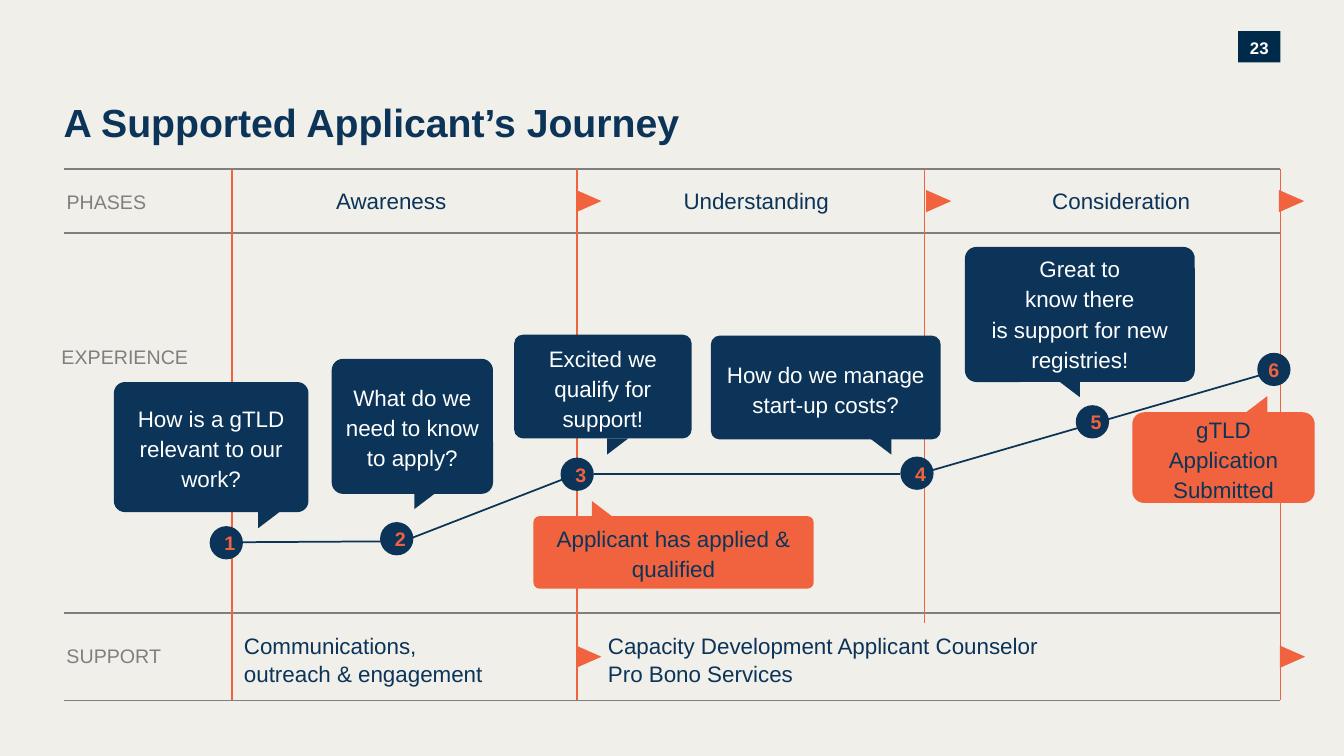
import pptx
import pptx.dml.color
import pptx.enum.shapes
import pptx.enum.text
import pptx.oxml
import pptx.util
from pptx.util import Inches

COLORS = {
    "paper": "F1EFEA",
    "navy": "0B3458",
    "dark": "002A49",
    "orange": "F1633E",
    "gray": "7F7F7F",
    "white": "FFFFFF",
}
RGB = {name: pptx.dml.color.RGBColor.from_string(value) for name, value in COLORS.items()}
SHAPE = pptx.enum.shapes.MSO_SHAPE
MIDDLE = pptx.enum.text.MSO_ANCHOR.MIDDLE
TOP = pptx.enum.text.MSO_ANCHOR.TOP
CENTER = pptx.enum.text.PP_ALIGN.CENTER
LEFT = pptx.enum.text.PP_ALIGN.LEFT

presentation = pptx.Presentation()
presentation.slide_width = Inches(13.33)
presentation.slide_height = Inches(7.5)
slide = presentation.slides.add_slide(presentation.slide_layouts[6])
slide.background.fill.solid()
slide.background.fill.fore_color.rgb = RGB["paper"]


def add_filled(kind, box, color):
    shape = slide.shapes.add_shape(kind, *map(Inches, box))
    shape.shadow.inherit = False
    shape.fill.solid()
    shape.fill.fore_color.rgb = RGB[color]
    shape.line.fill.background()
    return shape


def write_text(shape, text, size, color, bold=False, align=CENTER, anchor=MIDDLE,
               insets=(0, 0, 0, 0), spacing=None):
    frame = shape.text_frame
    left, top, right, bottom = map(Inches, insets)
    frame_format = {"word_wrap": True, "vertical_anchor": anchor, "margin_left": left,
                    "margin_top": top, "margin_right": right, "margin_bottom": bottom}
    for name, value in frame_format.items():
        setattr(frame, name, value)
    paragraph = frame.paragraphs[0]
    paragraph.text = text
    paragraph.alignment = align
    paragraph.line_spacing = spacing
    for run in paragraph.runs:
        font_format = {"name": "Arial", "size": pptx.util.Pt(size), "bold": bold}
        for name, value in font_format.items():
            setattr(run.font, name, value)
        run.font.color.rgb = RGB[color]


# Page number
page_number = add_filled(SHAPE.RECTANGLE, (12.28, 0.31, 0.42, 0.31), "dark")
write_text(page_number, "23", 12, "white", bold=True, spacing=1.08)

# Title, row labels, phase names and support texts
heading = {"size": 28, "color": "navy", "bold": True, "align": LEFT, "anchor": TOP}
row_label = {"size": 14, "color": "gray", "align": LEFT, "anchor": TOP}
phase = {"size": 16, "color": "navy", "spacing": 1.06}
support = {**phase, "align": LEFT}
texts = [
    ("A Supported Applicant’s Journey", (0.63, 0.98, 8.51, 0.58), heading),
    ("PHASES", (0.66, 1.88, 1.45, 0.24), row_label),
    ("EXPERIENCE", (0.61, 3.42, 1.75, 0.24), row_label),
    ("SUPPORT", (0.66, 6.39, 1.64, 0.24), row_label),
    ("Communications,\noutreach & engagement", (2.26, 6.15, 3.46, 0.77),
     {**support, "insets": (0.16, 0, 0, 0)}),
    ("Capacity Development Applicant Counselor\nPro Bono Services", (5.72, 6.15, 6.97, 0.77),
     {**support, "insets": (0.31, 0.05, 0.1, 0.05)}),
]
for index, name in enumerate(["Awareness", "Understanding", "Consideration"]):
    texts.append((name, (2.27 + 3.62 * index, 1.75, 3.22, 0.46), phase))
for text, box, text_format in texts:
    write_text(slide.shapes.add_textbox(*map(Inches, box)), text, **text_format)

# Row rules, column rules and journey path
lines = [(0.63, y, 12.7, y, "gray") for y in (1.68, 2.31, 6.08, 6.95)]
lines += [(x, 1.68, x, bottom, "orange")
          for x, bottom in ((2.3, 6.94), (5.72, 6.94), (9.17, 6.18), (12.7, 6.94))]
lines += [
    (2.25, 5.38, 4, 5.37, "navy"),
    (4, 5.37, 5.7, 4.71, "navy"),
    (5.89, 4.7, 8.93, 4.7, "navy"),
    (9.16, 4.69, 12.68, 3.67, "navy"),
]
for *ends, color in lines:
    connector = slide.shapes.add_connector(
        pptx.enum.shapes.MSO_CONNECTOR.STRAIGHT, *map(Inches, ends))
    connector.line.color.rgb = RGB[color]
    connector.line.width = pptx.util.Pt(1.25)
    connector.element.spPr.append(pptx.oxml.parse_xml(
        '<a:effectLst xmlns:a="http://schemas.openxmlformats.org/drawingml/2006/main"/>'))

# Column arrows
for x, y in [(5.73, 1.87), (9.2, 1.87), (12.7, 1.87), (5.73, 6.39), (12.71, 6.39)]:
    arrow = add_filled(SHAPE.ISOSCELES_TRIANGLE, (x, y, 0.22, 0.25), "orange")
    arrow.rotation = 90

# Numbered steps
steps = [(2.08, 5.22), (3.77, 5.18), (5.56, 4.54), (8.93, 4.53), (10.67, 4.02), (12.47, 3.5)]
for number, (x, y) in enumerate(steps, start=1):
    step = add_filled(SHAPE.OVAL, (x, y, 0.33, 0.33), "navy")
    step_insets = (0, 0, 0, 0) if number == 6 else (0.1, 0.05, 0.1, 0.05)
    write_text(step, str(number), 14, "orange", bold=True, insets=step_insets)

# Speech bubbles: text, box, fill, text colour, corner, bottom inset,
# then the tail's place, rotation and mirroring
bubbles = [
    ("How is a gTLD relevant to our work?", (1.13, 3.79, 1.93, 1.29),
     "navy", "white", 0.085, 0.08, (2.56, 5.08), 180, True),
    ("What do we need to know to apply?", (3.29, 3.56, 1.6, 1.34),
     "navy", "white", 0.085, 0.08, (4.11, 4.89), 180, True),
    ("Excited we qualify for support!", (5.1, 3.32, 1.76, 1.03),
     "navy", "white", 0.085, 0.08, (6.02, 4.35), 180, True),
    ("How do we manage start-up costs?", (7.05, 3.33, 2.28, 1.03),
     "navy", "white", 0.085, 0.08, (8.63, 4.35), 180, False),
    ("Great to\nknow there\nis support for new registries!", (9.57, 2.45, 2.28, 1.34),
     "navy", "white", 0.085, 0.12, (10.5, 3.78), 180, False),
    ("Applicant has applied & qualified", (5.29, 5.12, 2.78, 0.72),
     "orange", "navy", 0.085, 0.08, (5.87, 4.97), 0, False),
    ("gTLD Application Submitted", (11.23, 4.09, 1.81, 0.9),
     "orange", "navy", 0.13, 0.08, (12.36, 3.93), 0, True),
]
for text, box, fill, color, corner, inset, tail_place, rotation, mirrored in bubbles:
    bubble = add_filled(SHAPE.ROUNDED_RECTANGLE, box, fill)
    bubble.adjustments[0] = corner
    write_text(bubble, text, 16, color, insets=(0.08, 0.08, 0.08, inset), spacing=1.12)
    tail = add_filled(SHAPE.RIGHT_TRIANGLE, (*tail_place, 0.21, 0.16), fill)
    tail.rotation = rotation
    if mirrored:
        tail.element.spPr.xfrm.set("flipH", "1")

presentation.save("out.pptx")
